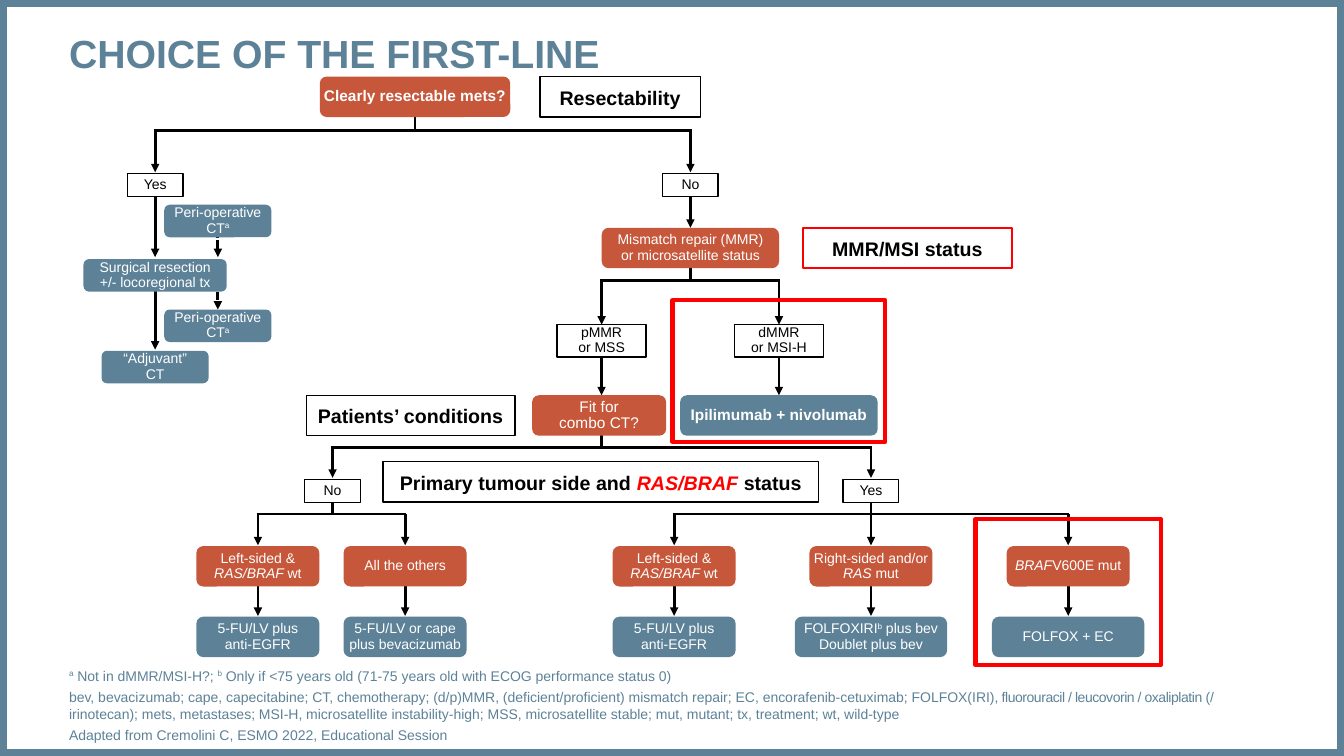
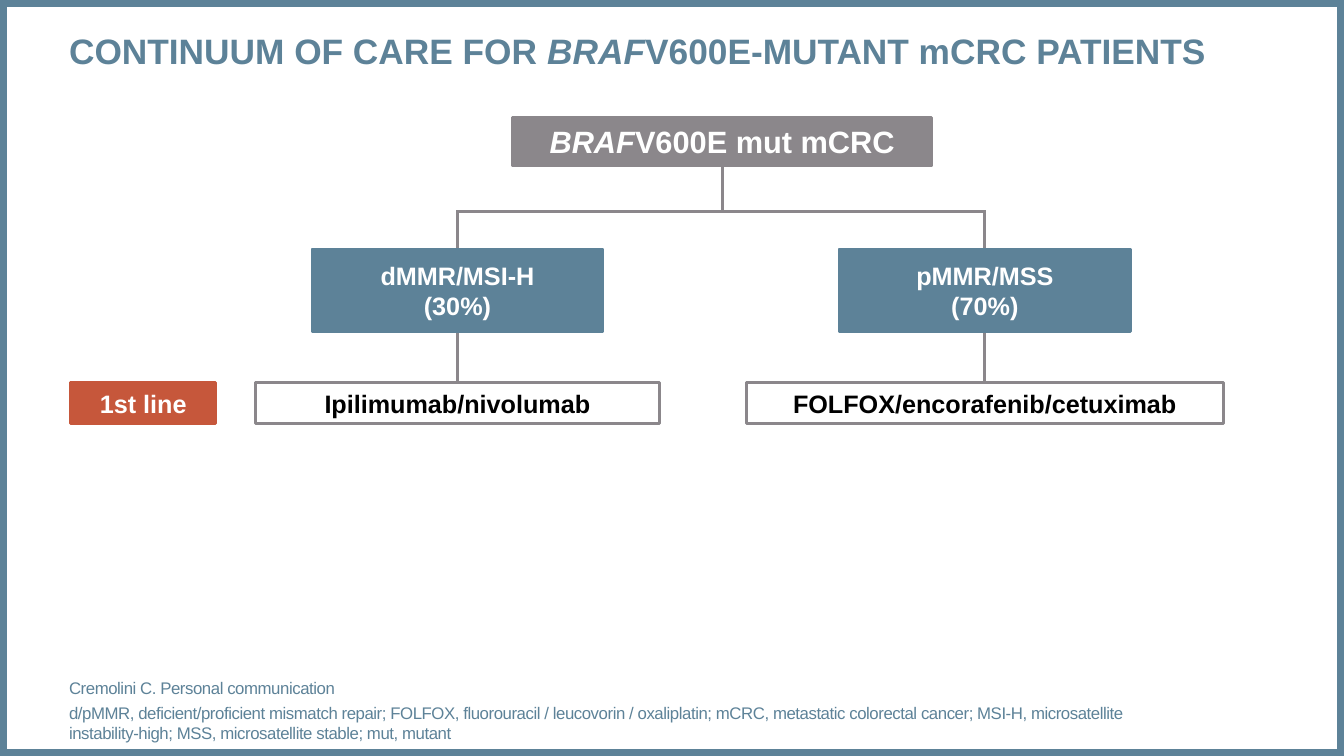
from lxml.etree import SubElement
from pptx import Presentation
from pptx.dml.color import RGBColor
from pptx.enum.dml import MSO_LINE
from pptx.enum.shapes import MSO_CONNECTOR, MSO_SHAPE
from pptx.enum.text import MSO_ANCHOR as ANCHOR, MSO_AUTO_SIZE, PP_ALIGN as ALIGN
from pptx.oxml.ns import qn
from pptx.util import Cm, Pt

BLUE = RGBColor(0x5D, 0x82, 0x98)
ORANGE = RGBColor(0xC6, 0x57, 0x3B)
GREY = RGBColor(0x8B, 0x87, 0x8B)
RED = RGBColor(0xFF, 0x00, 0x00)
BLACK = RGBColor(0x00, 0x00, 0x00)
WHITE = RGBColor(0xFF, 0xFF, 0xFF)

WIDTH, HEIGHT = 33.87, 19.05
MARGIN = 1.74
BODY_BOTTOM, BODY_HEIGHT = 18.72, 1.6
CORNER = 0.17

ITALIC = {"italic": True}
SUPER = {"baseline": 30000}
TIGHT = {"spc": -30}
RAS_BRAF_WT = ["Left-sided &\n", ("RAS/BRAF ", ITALIC), "wt"]
PERI_OPERATIVE = ["Peri-operative\nCT", ("a", SUPER)]


class Deck:
    def __init__(self):
        self.prs = Presentation()
        self.prs.slide_width, self.prs.slide_height = Cm(WIDTH), Cm(HEIGHT)
        self.s = None

    def slide(self, title, title_size, notes, notes_size, notes_width):
        self.s = self.prs.slides.add_slide(self.prs.slide_layouts[1])
        self.frame(WIDTH / 2, 0, WIDTH, HEIGHT, BLUE, 10)
        heading, body = self.s.placeholders
        self.place(heading, MARGIN, 0.74, 30.45, 2.39)
        self.set_text(heading.text_frame, title,
                      {"size": Pt(title_size), "bold": True, "color": BLUE})
        self.place(body, MARGIN, BODY_BOTTOM - BODY_HEIGHT, notes_width, BODY_HEIGHT)
        self.set_text(body.text_frame, notes, {"size": Pt(notes_size), "color": BLUE},
                      anchor=ANCHOR.BOTTOM, gap=3)

    def place(self, sp, left, top, width, height):
        box = {"left": left, "top": top, "width": width, "height": height}
        for name, value in box.items():
            setattr(sp, name, Cm(value))

    def style_run(self, r, style):
        for name, value in style.items():
            if name == "color":
                r.font.color.rgb = value
            elif name in ("spc", "baseline"):
                r._r.get_or_add_rPr().set(name, str(value))
            else:
                setattr(r.font, name, value)

    def new_paragraph(self, p, align, spacing, gap):
        layout = {"alignment": align, "line_spacing": spacing, "space_before": Pt(gap)}
        for name, value in layout.items():
            setattr(p, name, value)
        pPr = p._p.get_or_add_pPr()
        pPr.set("marL", "0")
        pPr.set("indent", "0")
        SubElement(pPr, qn("a:buNone"))
        return p

    def set_text(self, tf, text, style, align=ALIGN.LEFT, anchor=ANCHOR.TOP,
                 spacing=1.0, gap=0, inset_top=0):
        frame = {"word_wrap": True, "auto_size": MSO_AUTO_SIZE.NONE, "vertical_anchor": anchor,
                 "margin_left": 0, "margin_right": 0, "margin_bottom": 0,
                 "margin_top": Cm(inset_top)}
        for name, value in frame.items():
            setattr(tf, name, value)
        p = self.new_paragraph(tf.paragraphs[0], align, spacing, 0)
        for item in [text] if isinstance(text, str) else text:
            words, extra = (item, {}) if isinstance(item, str) else item
            for i, line in enumerate(words.split("\n")):
                if i:
                    p = self.new_paragraph(tf.add_paragraph(), align, spacing, gap)
                if line:
                    r = p.add_run()
                    r.text = line
                    self.style_run(r, {"name": "Arial", **style, **extra})

    def note(self, text, left, top, width, height, size):
        tf = self.s.shapes.add_textbox(Cm(left), Cm(top), Cm(width), Cm(height)).text_frame
        self.set_text(tf, text, {"size": Pt(size), "color": BLUE})

    def shape(self, kind, x, top, width, height, line=None, weight=1):
        sp = self.s.shapes.add_shape(kind, Cm(x - width / 2), Cm(top), Cm(width), Cm(height))
        sp.shadow.inherit = False
        if line is None:
            sp.line.fill.background()
        else:
            sp.line.color.rgb = line
            sp.line.width = Pt(weight)
        return sp

    def frame(self, x, top, width, height, color, weight):
        self.shape(MSO_SHAPE.RECTANGLE, x, top, width, height, color, weight).fill.background()

    def box(self, text, x, top, width, height, fill=WHITE, line=None, weight=1, size=10,
            bold=False, rounded=False, spacing=0.9, inset_top=0):
        kind = MSO_SHAPE.ROUNDED_RECTANGLE if rounded else MSO_SHAPE.RECTANGLE
        sp = self.shape(kind, x, top, width, height, line, weight)
        if rounded:
            sp.adjustments[0] = CORNER
        sp.fill.solid()
        sp.fill.fore_color.rgb = fill
        color = BLACK if fill == WHITE else WHITE
        self.set_text(sp.text_frame, text, {"size": Pt(size), "bold": bold, "color": color},
                      ALIGN.CENTER, ANCHOR.MIDDLE, spacing, inset_top=inset_top)

    def node(self, text, x, top, width, height, fill, **style):
        self.box(text, x, top, width, height, fill, rounded=True, **style)

    def answer(self, text, x, top, width=1.4, height=0.58):
        self.box(text, x, top, width, height, line=BLACK)

    def label(self, text, x, top, width, line=BLACK, weight=1):
        self.box(text, x, top, width, 1.02, line=line, weight=weight, size=14, bold=True,
                 inset_top=0.1)

    def line(self, x1, y1, x2, y2, color=BLACK, arrow=False, dashed=False):
        c = self.s.shapes.add_connector(MSO_CONNECTOR.STRAIGHT, Cm(x1), Cm(y1), Cm(x2), Cm(y2))
        c.line.color.rgb = color
        c.line.width = Pt(2)
        if dashed:
            c.line.dash_style = MSO_LINE.SQUARE_DOT
        spPr = c.element.spPr
        if arrow:
            SubElement(spPr.find(qn("a:ln")), qn("a:tailEnd"), type="triangle")
        SubElement(spPr, qn("a:effectLst"))

    def arrow(self, x, top, bottom, dashed=False):
        self.line(x, top, x, bottom, arrow=True, dashed=dashed)

    def branch(self, trunk, top, bar, bottom, columns, color=BLACK, arrow=True):
        self.line(trunk, top, trunk, bar, color)
        self.line(min(columns) - 0.03, bar, max(columns) + 0.03, bar, color)
        for x in columns:
            self.line(x, bar, x, bottom, color, arrow)


def first_line(deck):
    deck.slide(
        "CHOICE OF THE FIRST-LINE", 28,
        ["bev, bevacizumab; cape, capecitabine; CT, chemotherapy; (d/p)MMR, (deficient/proficient) "
         "mismatch repair; EC, encorafenib-cetuximab; FOLFOX(IRI), ",
         ("fluorouracil / leucovorin / oxaliplatin ", TIGHT),
         "(/ irinotecan); mets, metastases; MSI-H, microsatellite instability-high; MSS, "
         "microsatellite stable; mut, mutant; tx, treatment; wt, wild-type\n"
         "Adapted from Cremolini C, ESMO 2022, Educational Session"], 10, 30.43)
    deck.note([("a", SUPER), " Not in dMMR/MSI-H?; ", ("b", SUPER),
               " Only if <75 years old (71-75 years old with ECOG performance status 0)"],
              MARGIN, 16.81, 28.09, 0.5, 10)

    start, yes, no, peri = 10.46, 3.91, 17.4, 5.49
    pmmr, dmmr = 15.16, 19.63
    unfit, fit = 8.38, 21.95
    unfit_columns = [6.5, 10.21]
    fit_columns = [16.99, fit, 26.92]

    deck.branch(start, 2.24, 3.29, 4.34, [yes, no])
    deck.branch(no, 5.99, 7.06, 8.18, [pmmr, dmmr])
    deck.branch(pmmr, 10.46, 11.28, 12.04, [unfit, fit])
    deck.branch(unfit, 12.3, 12.95, 13.74, unfit_columns)
    deck.branch(fit, 12.3, 12.95, 13.74, fit_columns)
    for x, top, bottom in [(yes, 4.93, 6.48), (yes, 7.26, 8.81), (no, 4.67, 5.74),
                           (pmmr, 8.81, 9.96), (dmmr, 8.81, 9.96)]:
        deck.arrow(x, top, bottom)
    for x in unfit_columns + fit_columns:
        deck.arrow(x, 14.73, 15.52)
    for top, bottom in [(5.49, 6.48), (6.78, 7.8)]:
        deck.arrow(peri, top, bottom, dashed=True)

    for text, x, top in [("Yes", yes, 4.37), ("No", no, 4.37),
                         ("No", unfit, 12.09), ("Yes", fit, 12.09)]:
        deck.answer(text, x, top)
    for text, x in [("pMMR\nor MSS", pmmr), ("dMMR\nor MSI-H", dmmr)]:
        deck.answer(text, x, 8.18, 2.24, 0.82)

    for text, x, top, width in [(PERI_OPERATIVE, peri, 5.16, 2.7),
                                ("Surgical resection\n+/- locoregional tx", yes, 6.53, 3.61),
                                (PERI_OPERATIVE, peri, 7.8, 2.7),
                                ("“Adjuvant”\nCT", yes, 8.84, 2.7)]:
        deck.node(text, x, top, width, 0.82, BLUE)

    deck.node("Clearly resectable mets?", start, 1.93, 4.8, 1.02, ORANGE, size=11, bold=True)
    deck.node("Mismatch repair (MMR)\nor microsatellite status", no, 5.74, 4.47, 1.02, ORANGE)
    deck.node("Fit for\ncombo CT?", 15.1, 9.96, 3.38, 1.02, ORANGE, size=11)
    deck.node("Ipilimumab + nivolumab", dmmr, 9.96, 4.98, 1.02, BLUE, size=11, bold=True)

    groups = [
        (RAS_BRAF_WT, "5-FU/LV plus\nanti-EGFR", 3.1),
        ("All the others", "5-FU/LV or cape\nplus bevacizumab", 3.1),
        (RAS_BRAF_WT, "5-FU/LV plus\nanti-EGFR", 3.1),
        (["Right-sided and/or\n", ("RAS ", ITALIC), "mut"],
         ["FOLFOXIRI", ("b", SUPER), " plus bev\nDoublet plus bev"], 3.84),
        ([("BRAF", ITALIC), "V600E mut"], "FOLFOX + EC", 3.84),
    ]
    for x, (tumour, therapy, width) in zip(unfit_columns + fit_columns, groups):
        deck.node(tumour, x, 13.76, 3.1, 1.02, ORANGE)
        deck.node(therapy, x, 15.54, width, 1.02, BLUE)

    deck.label("Resectability", 15.63, 1.93, 4.04)
    deck.label("MMR/MSI status", 22.87, 5.74, 5.26, RED, 1.75)
    deck.label("Patients’ conditions", 10.35, 9.96, 5.26)
    deck.label(["Primary tumour side and ", ("RAS/BRAF ", {"italic": True, "color": RED}),
                "status"], 15.14, 11.63, 10.97)
    deck.frame(dmmr, 7.57, 5.36, 3.56, RED, 3)
    deck.frame(fit_columns[-1], 13.08, 4.67, 3.68, RED, 3)


def continuum(deck):
    deck.slide(
        ["CONTINUUM OF CARE FOR ", ("BRAF", ITALIC), "V600E-MUTANT mCRC PATIENTS"], 25.2,
        [("Cremolini C. Personal communication\n"
          "d/pMMR, deficient/proficient mismatch repair; FOLFOX, fluorouracil / leucovorin / "
          "oxaliplatin; mCRC, metastatic colorectal cancer; MSI-H, microsatellite "
          "instability-high; MSS, microsatellite stable; mut, mutant", TIGHT)], 12, 28.27)

    root, dmmr, pmmr = 18.2, 11.53, 24.82
    style = {"bold": True, "spacing": 1.0}
    deck.branch(root, 4.16, 5.33, 9.9, [dmmr, pmmr], GREY, arrow=False)
    deck.box([("BRAF", ITALIC), "V600E mut mCRC"], root, 2.97, 10.57, 1.19, GREY, GREY, 2.25,
             size=22, **style)
    deck.box("1st line", 3.61, 9.65, 3.66, 1.02, ORANGE, ORANGE, 2.25, size=18, **style)
    for x, status, therapy, width in [
            (dmmr, "dMMR/MSI-H\n(30%)", "Ipilimumab/nivolumab", 10.19),
            (pmmr, "pMMR/MSS\n(70%)", "FOLFOX/encorafenib/cetuximab", 12.01)]:
        deck.box(status, x, 6.27, 7.34, 2.08, BLUE, BLUE, 1.75, size=18, **style)
        deck.box(therapy, x, 9.65, width, 1.02, WHITE, GREY, 2.25, size=18, **style)


def main():
    deck = Deck()
    first_line(deck)
    continuum(deck)
    deck.prs.save("out.pptx")


if __name__ == "__main__":
    main()
